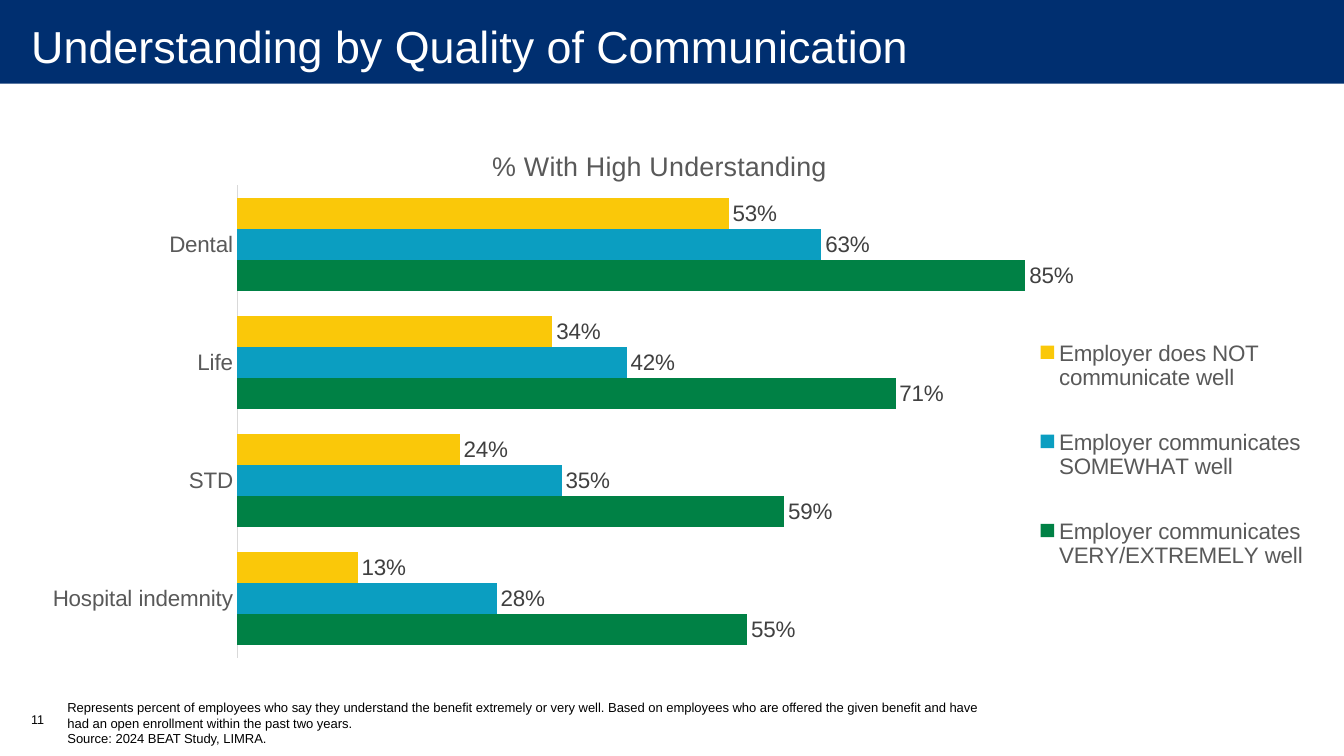
from dataclasses import dataclass

from lxml import etree
from pptx import Presentation
from pptx.chart.data import CategoryChartData
from pptx.dml.color import RGBColor
from pptx.enum.chart import XL_CHART_TYPE, XL_LABEL_POSITION, XL_LEGEND_POSITION, XL_TICK_LABEL_POSITION, XL_TICK_MARK
from pptx.enum.shapes import MSO_SHAPE
from pptx.enum.text import MSO_ANCHOR
from pptx.oxml.ns import qn
from pptx.util import Inches, Pt

BAR_CLUSTERED = XL_CHART_TYPE.BAR_CLUSTERED
OUTSIDE_END = XL_LABEL_POSITION.OUTSIDE_END
LEGEND_RIGHT = XL_LEGEND_POSITION.RIGHT
NO_TICK_LABELS = XL_TICK_LABEL_POSITION.NONE
NO_TICKS = XL_TICK_MARK.NONE
RECTANGLE = MSO_SHAPE.RECTANGLE
TOP, MIDDLE = MSO_ANCHOR.TOP, MSO_ANCHOR.MIDDLE


@dataclass(frozen=True)
class Theme:
    font: str = "Arial"
    navy: str = "002F70"
    white: str = "FFFFFF"
    black: str = "000000"
    gray: str = "595959"
    label_gray: str = "404040"
    axis_gray: str = "D9D9D9"
    green: str = "008145"
    blue: str = "0B9EC1"
    yellow: str = "FAC809"
    title_size: float = 32
    chart_title_size: float = 19.2
    chart_size: float = 16
    note_size: float = 9.3
    number_size: float = 9


THEME = Theme()
CATEGORIES = ["Hospital indemnity", "STD", "Life", "Dental"]
SERIES = [
    ("Employer communicates VERY/EXTREMELY well", [0.55, 0.59, 0.71, 0.85], THEME.green),
    ("Employer communicates SOMEWHAT well", [0.28, 0.35, 0.42, 0.63], THEME.blue),
    ("Employer does NOT communicate well", [0.13, 0.24, 0.34, 0.53], THEME.yellow),
]
NOTES = [
    "Represents percent of employees who say they understand the benefit extremely or very well. "
    "Based on employees who are offered the given benefit and have had an open enrollment within "
    "the past two years.",
    "Source: 2024 BEAT Study, LIMRA.",
]


def set_font(font, size, color):
    font.name = THEME.font
    font.size = Pt(size)
    font.bold = False
    font.color.rgb = RGBColor.from_string(color)


def add_band(slide, left, top, width, height, color):
    band = slide.shapes.add_shape(RECTANGLE, Inches(left), Inches(top), Inches(width), Inches(height))
    band.shadow.inherit = False
    band.fill.solid()
    band.fill.fore_color.rgb = RGBColor.from_string(color)
    band.line.fill.background()


def add_text(slide, paragraphs, left, top, width, height, *, size, color=THEME.black,
             anchor=TOP, margins=(0.1, 0.05, 0.1, 0.05)):
    box = slide.shapes.add_textbox(Inches(left), Inches(top), Inches(width), Inches(height))
    frame = box.text_frame
    frame.word_wrap = True
    frame.vertical_anchor = anchor
    frame.margin_left, frame.margin_top, frame.margin_right, frame.margin_bottom = map(Inches, margins)
    frame.text = "\n".join(paragraphs)
    for paragraph in frame.paragraphs:
        set_font(paragraph.font, size, color)


def place_part(part, index, left, top, width=None, height=None, inner=False):
    for old_layout in part.findall(qn("c:layout")):
        part.remove(old_layout)
    layout = etree.Element(qn("c:layout"))
    manual = etree.SubElement(layout, qn("c:manualLayout"))
    settings = [("layoutTarget", "inner" if inner else None), ("xMode", "edge"), ("yMode", "edge"),
                ("x", left), ("y", top), ("w", width), ("h", height)]
    for name, value in settings:
        if value is not None:
            etree.SubElement(manual, qn(f"c:{name}")).set("val", str(value))
    part.insert(index, layout)


def style_series(series, color):
    series.format.fill.solid()
    series.format.fill.fore_color.rgb = RGBColor.from_string(color)
    series.invert_if_negative = False
    labels = series.data_labels
    labels.show_value = True
    labels.position = OUTSIDE_END
    labels.number_format = "0%"
    labels.number_format_is_linked = False
    set_font(labels.font, THEME.chart_size, THEME.label_gray)


def style_axes(chart):
    category_axis = chart.category_axis
    category_axis.major_tick_mark = NO_TICKS
    category_axis.has_major_gridlines = False
    category_axis.format.line.color.rgb = RGBColor.from_string(THEME.axis_gray)
    category_axis.format.line.width = Pt(0.75)
    set_font(category_axis.tick_labels.font, THEME.chart_size, THEME.gray)
    value_axis = chart.value_axis
    value_axis.minimum_scale = 0
    value_axis.maximum_scale = 0.9
    value_axis.has_major_gridlines = False
    value_axis.tick_label_position = NO_TICK_LABELS
    value_axis.visible = False


def add_bar_chart(slide, title, left, top, width, height):
    data = CategoryChartData(number_format="0%")
    data.categories = CATEGORIES
    for name, values, _ in SERIES:
        data.add_series(name, values)
    frame = slide.shapes.add_chart(BAR_CLUSTERED, Inches(left), Inches(top), Inches(width), Inches(height), data)
    chart = frame.chart
    set_font(chart.font, THEME.chart_size, THEME.black)

    chart.has_title = True
    chart.chart_title.text_frame.text = title
    title_run = chart.chart_title.text_frame.paragraphs[0].runs[0]
    set_font(title_run.font, THEME.chart_title_size, THEME.gray)

    chart.has_legend = True
    chart.legend.position = LEGEND_RIGHT
    chart.legend.include_in_layout = True
    set_font(chart.legend.font, THEME.chart_size, THEME.gray)

    plot = chart.plots[0]
    plot.gap_width = 80
    plot.overlap = 0
    plot.vary_by_categories = False
    for series, (_, _, color) in zip(plot.series, SERIES):
        style_series(series, color)
    style_axes(chart)

    chart_root = chart.element.find(qn("c:chart"))
    plot_area = chart_root.find(qn("c:plotArea"))
    place_part(chart_root.find(qn("c:title")), 1, 0.37, 0.04)
    place_part(plot_area, 0, 0.18, 0.115, 0.634, 0.843, inner=True)
    place_part(chart_root.find(qn("c:legend")), 1, 0.78, 0.32, 0.22, 0.55)


def main():
    presentation = Presentation()
    presentation.slide_width = Inches(13.33)
    presentation.slide_height = Inches(7.5)
    slide = presentation.slides.add_slide(presentation.slide_layouts[6])
    add_band(slide, 0, -0.03, 13.33, 0.86, THEME.navy)
    add_text(slide, ["Understanding by Quality of Communication"], 0.01, -0.03, 13.32, 0.97,
             size=THEME.title_size, color=THEME.white, anchor=MIDDLE, margins=(0.3, 0, 0.2, 0))
    add_text(slide, NOTES, 0.57, 6.89, 9.42, 0.57, size=THEME.note_size)
    add_bar_chart(slide, "% With High Understanding", 0, 1.2, 13.06, 5.56)
    add_text(slide, ["11"], 0.21, 7.01, 0.49, 0.4, size=THEME.number_size)
    presentation.save("out.pptx")


if __name__ == "__main__":
    main()
